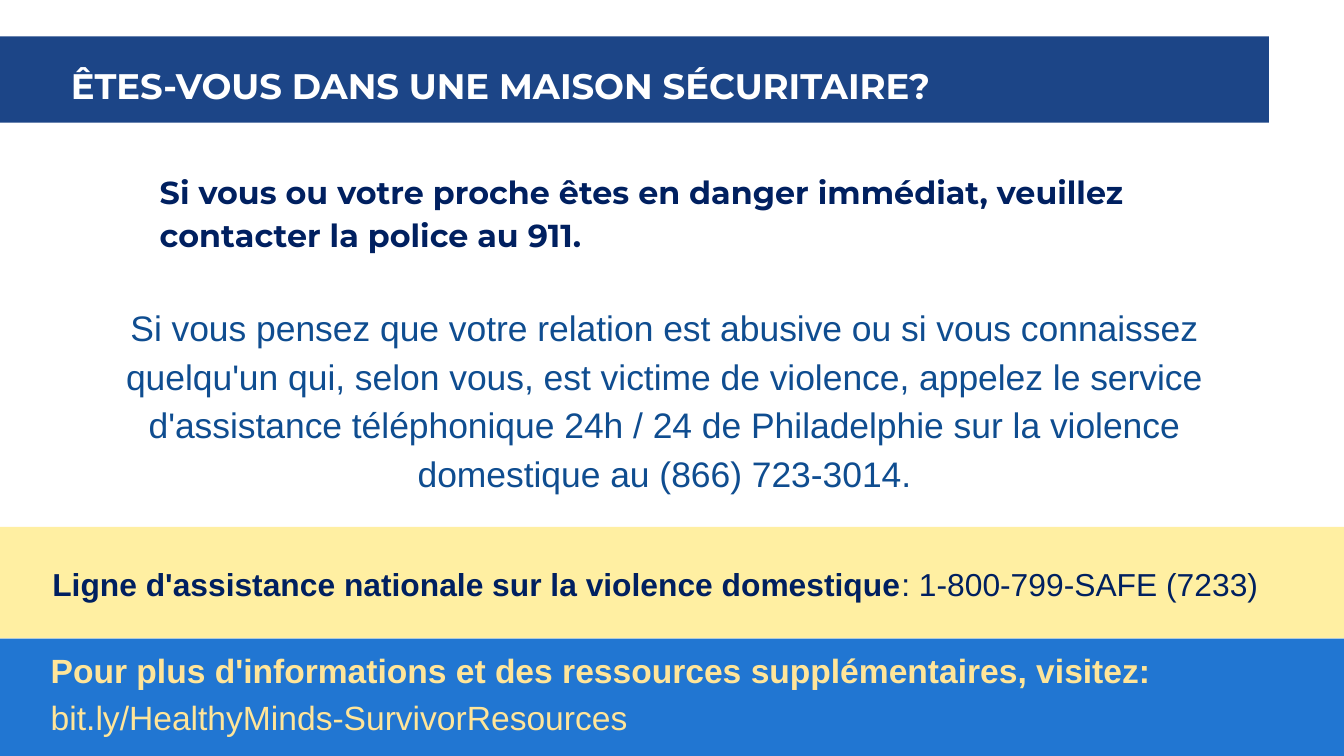
from typing import NamedTuple

import pptx
import pptx.dml.color
import pptx.enum.shapes
import pptx.enum.text
import pptx.util

Cm = pptx.util.Cm
LEFT = pptx.enum.text.PP_ALIGN.LEFT
CENTER = pptx.enum.text.PP_ALIGN.CENTER
WIDE, HIGH = 25.4, 14.29
NAVY = "002060"


class Box(NamedTuple):
    left: float
    top: float
    width: float
    height: float


class Band(NamedTuple):
    box: Box
    fill: str


class Run(NamedTuple):
    text: str
    bold: bool = False


class Line(NamedTuple):
    runs: list[Run]
    space: float = 1.15


class Block(NamedTuple):
    box: Box
    lines: list[Line]
    size: int
    color: str
    font: str = "Arial"
    align: pptx.enum.text.PP_ALIGN = LEFT


BANDS = [
    Band(Box(0, 0.69, 23.98, 1.63), "1C4587"),
    Band(Box(0, 9.96, WIDE, 2.11), "FFEFA2"),
    Band(Box(0, 12.07, WIDE, HIGH - 12.07), "2176D2"),
]
TITLE = Block(
    Box(1.09, 0.84, 22.89, 0.99),
    [Line([Run("ÊTES-VOUS DANS UNE MAISON SÉCURITAIRE?", True)])],
    19, "FFFFFF", "Montserrat",
)
BLOCKS = [
    Block(
        Box(2.77, 2.9, 19.08, 1.63),
        [Line([Run("Si vous ou votre proche êtes en danger immédiat, "
                   "veuillez contacter la police au 911.", True)])],
        17, NAVY, "Montserrat",
    ),
    Block(
        Box(0.94, 5.41, 23.24, 2.06),
        [Line([Run("Si vous pensez que votre relation est abusive ou si vous "
                   "connaissez quelqu'un qui, selon vous, est victime de "
                   "violence, appelez le service d'assistance téléphonique "
                   "24h / 24 de Philadelphie sur la violence domestique au "
                   "(866) 723-3014.")])],
        19, "0F4D90", align=CENTER,
    ),
    Block(
        Box(0.74, 10.31, 24.03, 1.42),
        [Line([Run("Ligne d'assistance nationale sur la violence domestique", True),
               Run(": 1-800-799-SAFE (7233)")])],
        17, NAVY,
    ),
    Block(
        Box(0.71, 12.04, 23.67, 2.1),
        [Line([Run("Pour plus d'informations et des ressources "
                   "supplémentaires, visitez:", True)], 1),
         Line([Run("bit.ly/HealthyMinds-SurvivorResources")])],
        18, "FFE599",
    ),
]


def paint(target, color: str) -> None:
    """Set a fill or font colour from a hex string."""
    target.rgb = pptx.dml.color.RGBColor.from_string(color)


def place(shape, box: Box) -> None:
    for name, value in box._asdict().items():
        setattr(shape, name, Cm(value))


def draw_band(slide, band: Band):
    kind = pptx.enum.shapes.MSO_SHAPE.RECTANGLE
    shape = slide.shapes.add_shape(kind, *map(Cm, band.box))
    shape.shadow.inherit = False
    shape.fill.solid()
    paint(shape.fill.fore_color, band.fill)
    shape.line.fill.background()
    return shape


def write(shape, block: Block) -> None:
    place(shape, block.box)
    frame = shape.text_frame
    layout = {
        "word_wrap": True,
        "auto_size": pptx.enum.text.MSO_AUTO_SIZE.NONE,
        "vertical_anchor": pptx.enum.text.MSO_ANCHOR.TOP,
    }
    layout |= {f"margin_{side}": Cm(0.25) for side in ("left", "right", "top", "bottom")}
    for name, value in layout.items():
        setattr(frame, name, value)
    for index, line in enumerate(block.lines):
        para = frame.add_paragraph() if index else frame.paragraphs[0]
        para.alignment = block.align
        para.line_spacing = line.space
        para.space_before = pptx.util.Pt(0)
        for part in line.runs:
            run = para.add_run()
            run.text = part.text
            style = {"name": block.font, "size": pptx.util.Pt(block.size), "bold": part.bold}
            for name, value in style.items():
                setattr(run.font, name, value)
            paint(run.font.color, block.color)


def main() -> None:
    deck = pptx.Presentation()
    deck.slide_width, deck.slide_height = Cm(WIDE), Cm(HIGH)
    slide = deck.slides.add_slide(deck.slide_layouts[5])
    title = slide.shapes.title
    for band in BANDS:
        # Bands go behind the title.
        title.element.addprevious(draw_band(slide, band).element)
    write(title, TITLE)
    for block in BLOCKS:
        write(slide.shapes.add_textbox(*map(Cm, block.box)), block)
    deck.save("out.pptx")


if __name__ == "__main__":
    main()
